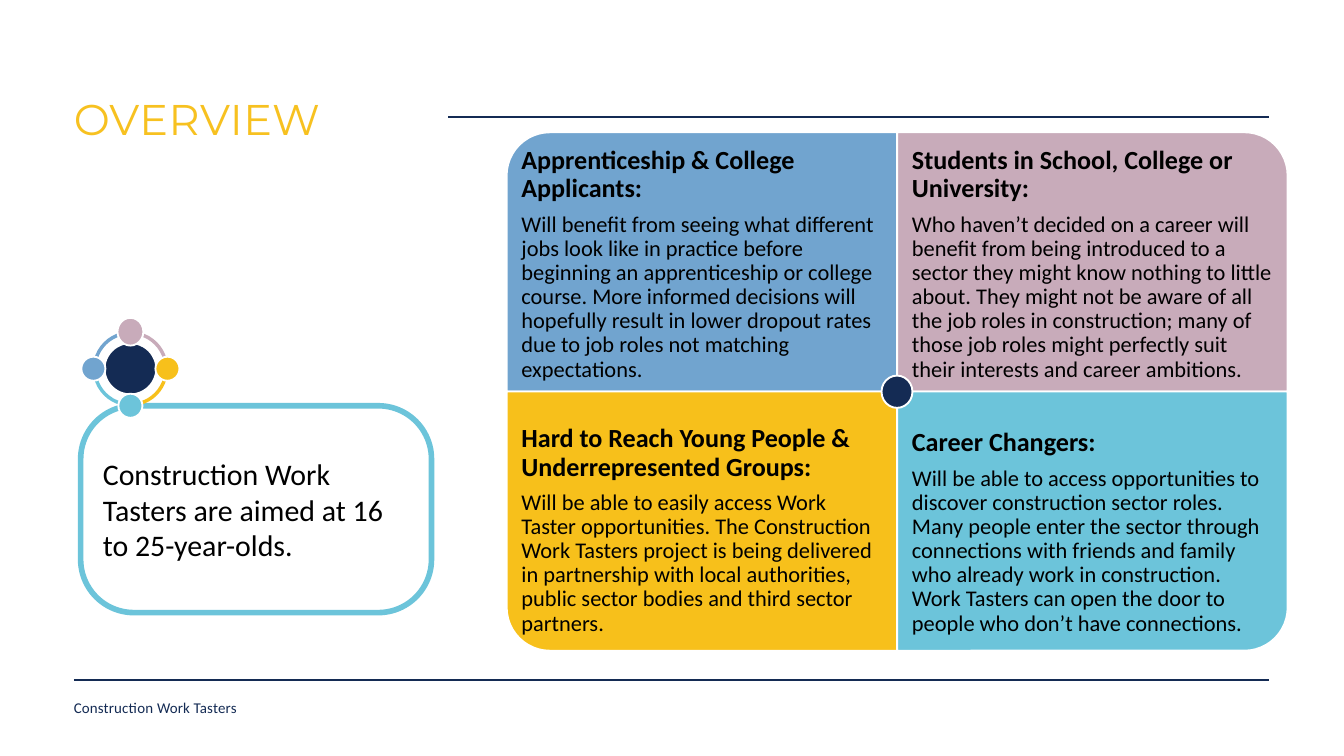
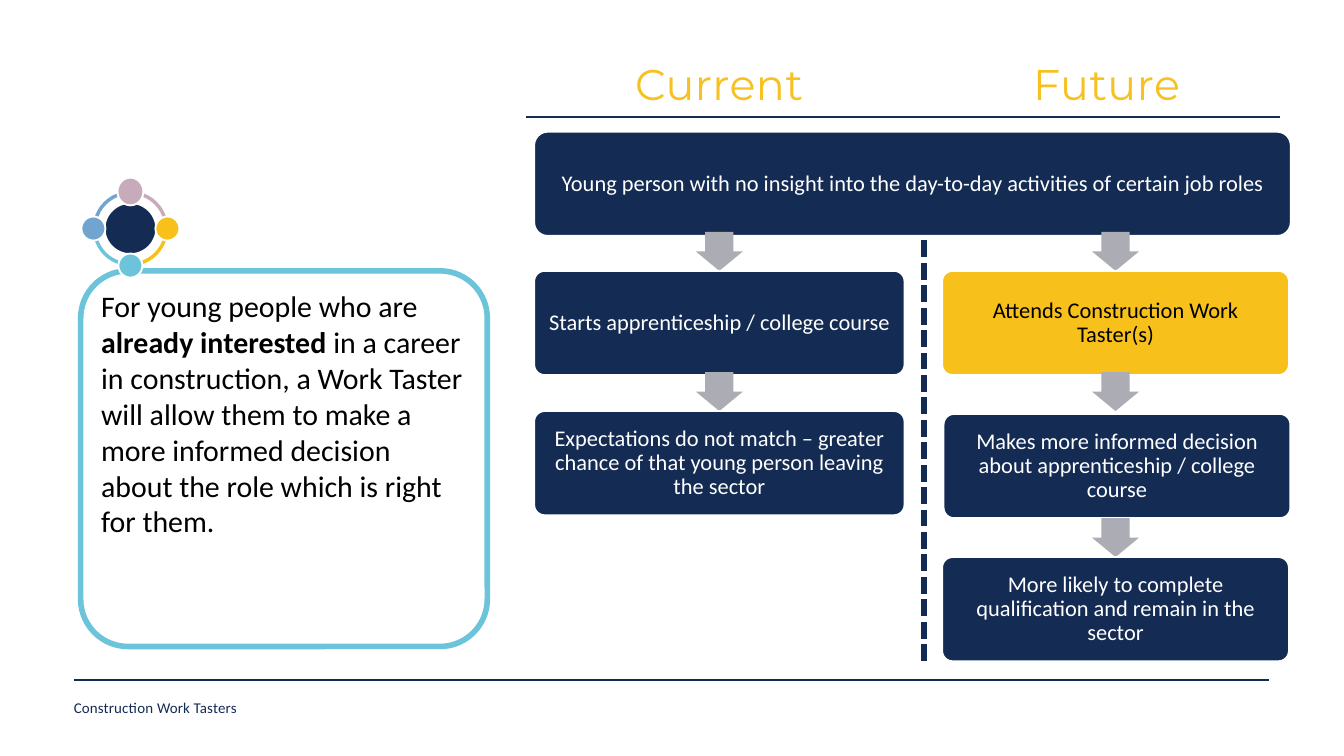
from lxml.etree import SubElement
from pptx import Presentation
from pptx.dml.color import RGBColor
from pptx.enum.dml import MSO_LINE
from pptx.enum.shapes import MSO_CONNECTOR, MSO_SHAPE
from pptx.enum.text import MSO_ANCHOR, MSO_AUTO_SIZE, PP_ALIGN
from pptx.oxml.ns import qn
from pptx.util import Cm, Pt

COLOURS = {
    "navy": "142B54", "divider": "122A54", "title": "F7C120", "yellow": "F7C01B",
    "cyan": "6CC4DA", "blue": "71A4CF", "pink": "C8ABBA", "grey": "ACADB4",
    "black": "000000", "white": "FFFFFF",
}
TITLE = {"font": {"name": "Montserrat", "size": Pt(46)}, "colour": "title", "tracking": 60,
         "paragraph": {"line_spacing": Pt(36.8)}}
FOOTER = {"font": {"name": "Calibri", "size": Pt(16)}, "colour": "navy", "tracking": 20,
          "paragraph": {"line_spacing": Pt(22.4)}}
PANEL = {"font": {"name": "Calibri", "size": Pt(32)}, "colour": "black",
         "paragraph": {"alignment": PP_ALIGN.LEFT}}
TILE_HEADING = {"font": {"name": "Calibri", "size": Pt(28), "bold": True}, "colour": "black",
                "paragraph": {"line_spacing": 0.9, "space_after": Pt(9.8)}}
TILE_BODY = {"font": {"name": "Calibri", "size": Pt(24)}, "colour": "black",
             "paragraph": {"line_spacing": 0.9}}
STEP = {"font": {"name": "Calibri", "size": Pt(24)}, "colour": "white",
        "paragraph": {"line_spacing": 0.9, "alignment": PP_ALIGN.CENTER}}

LEFT_MARGIN, RIGHT_MARGIN = 2.79, 47.96
TILE_LEFT, TILE_TOP, TILE_WIDTH, TILE_HEIGHT = 19.15, 5, 14.76, 9.8
TILE_TEXT_HEIGHT = 7.37
FLOW_LEFT, STEP_HEIGHT = 20.19, 3.94
STEP_TOPS = [10.24, 15.54, 21.06]
ARROW_WIDTH, ARROW_HEIGHT = 1.78, 1.47

TILES = [
    ("blue", 270, "Apprenticeship & College Applicants:",
     "Will benefit from seeing what different jobs look like in practice before beginning an "
     "apprenticeship or college course. More informed decisions will hopefully result in lower "
     "dropout rates due to job roles not matching expectations."),
    ("pink", 0, "Students in School, College or University:",
     "Who haven’t decided on a career will benefit from being introduced to a sector they might "
     "know nothing to little about. They might not be aware of all the job roles in construction; "
     "many of those job roles might perfectly suit their interests and career ambitions."),
    ("yellow", 180, "Hard to Reach Young People & Underrepresented Groups:",
     "Will be able to easily access Work Taster opportunities. The Construction Work Tasters "
     "project is being delivered in partnership with local authorities, public sector bodies "
     "and third sector partners."),
    ("cyan", 90, "Career Changers:",
     "Will be able to access opportunities to discover construction sector roles. Many people "
     "enter the sector through connections with friends and family who already work in "
     "construction. Work Tasters can open the door to people who don’t have connections."),
]
CURRENT_STEPS = [
    ("Starts apprenticeship / college course", "navy", 0),
    ("Expectations do not match – greater chance of that young person leaving the sector", "navy", 0),
]
FUTURE_STEPS = [
    ("Attends Construction Work Taster(s)", "yellow", 0),
    ("Makes more informed decision about apprenticeship / college course", "navy", 0.11),
    ("More likely to complete qualification and remain in the sector", "navy", 0),
]


def colour(name):
    """Return the named colour."""
    return RGBColor.from_string(COLOURS[name])


def set_attributes(target, values):
    """Set each named value on the target."""
    for name, value in values.items():
        setattr(target, name, value)


def set_frame(text_frame, margin=None, **values):
    """Wrap a text frame and set its margins and other values."""
    set_attributes(text_frame, {"word_wrap": True, **values})
    if margin is not None:
        sides = ("margin_left", "margin_top", "margin_right", "margin_bottom")
        set_attributes(text_frame, dict.fromkeys(sides, Cm(margin)))


def write_paragraph(paragraph, runs, style, **overrides):
    """Fill a paragraph with (text, font values) runs in one style."""
    set_attributes(paragraph, {**style["paragraph"], **overrides})
    for text, emphasis in runs:
        run = paragraph.add_run()
        run.text = text
        set_attributes(run.font, {**style["font"], **emphasis})
        run.font.color.rgb = colour(style["colour"])
        if "tracking" in style:
            run.font._element.set("spc", str(style["tracking"]))


def add_figure(shapes, kind, box, fill=None, line=None, width=2, adjustments=(), rotation=0):
    """Add a preset shape without shadow, with the given fill and outline."""
    shape = shapes.add_shape(kind, *map(Cm, box))
    shape.shadow.inherit = False
    shape.rotation = rotation
    for index, value in enumerate(adjustments):
        shape.adjustments[index] = value
    if fill:
        shape.fill.solid()
        shape.fill.fore_color.rgb = colour(fill)
    else:
        shape.fill.background()
    if line:
        shape.line.color.rgb = colour(line)
        shape.line.width = Pt(width)
    else:
        shape.line.fill.background()
    return shape


def add_rule(slide, start, end, width, name="navy", dash=None):
    """Draw a straight line between two points."""
    connector = slide.shapes.add_connector(MSO_CONNECTOR.STRAIGHT, *map(Cm, start + end))
    connector.line.color.rgb = colour(name)
    set_attributes(connector.line, {"width": Pt(width), "dash_style": dash})
    SubElement(connector._element.spPr, qn("a:effectLst"))


def add_label(slide, box, text, style, **overrides):
    """Add a single-line label without margins."""
    label = slide.shapes.add_textbox(*map(Cm, box))
    set_frame(label.text_frame, 0, auto_size=MSO_AUTO_SIZE.SHAPE_TO_FIT_TEXT)
    write_paragraph(label.text_frame.paragraphs[0], [(text, {})], style, **overrides)


def add_panel(slide, box, corner, runs, anchor):
    """Add the outlined panel with its statement."""
    panel = add_figure(slide.shapes, MSO_SHAPE.ROUNDED_RECTANGLE, box,
                       line="cyan", width=6, adjustments=[corner])
    set_frame(panel.text_frame, vertical_anchor=anchor)
    write_paragraph(panel.text_frame.paragraphs[0], runs, PANEL)


def add_badge(slide, middle):
    """Add the ring of arcs with a core and four satellites."""
    centre, ring, orbit = 4.93, 2.84, 1.4
    shapes = slide.shapes.add_group_shape().shapes
    for name, start, end in [("cyan", 108, 162), ("yellow", 54, 108), ("pink", 0, 54), ("blue", 162, 0)]:
        add_figure(shapes, MSO_SHAPE.BLOCK_ARC, (centre - ring / 2, middle - ring / 2, ring, ring),
                   fill=name, adjustments=[start, end, 0.046], rotation=270)
    for name, across, down, width, height in [
        ("navy", 0, 0, 1.96, 1.94), ("blue", -orbit, 0, 0.91, 0.91), ("pink", 0, -orbit, 0.98, 1.05),
        ("yellow", orbit, 0, 0.91, 0.91), ("cyan", 0, orbit, 0.91, 0.91),
    ]:
        box = (centre + across - width / 2, middle + down - height / 2, width, height)
        add_figure(shapes, MSO_SHAPE.OVAL, box, fill=name, line="white")


def add_tile(slide, index, name, rotation, heading, body):
    """Add one quarter of the matrix, its rounded corner facing outwards."""
    row, column = divmod(index, 2)
    left, top = TILE_LEFT + column * TILE_WIDTH, TILE_TOP + row * TILE_HEIGHT
    width, height = (TILE_HEIGHT, TILE_WIDTH) if rotation % 180 else (TILE_WIDTH, TILE_HEIGHT)
    box = (left + (TILE_WIDTH - width) / 2, top + (TILE_HEIGHT - height) / 2, width, height)
    add_figure(slide.shapes, MSO_SHAPE.ROUND_1_RECTANGLE, box, fill=name, line="white", rotation=rotation)
    text_top = top + row * (TILE_HEIGHT - TILE_TEXT_HEIGHT)
    textbox = slide.shapes.add_textbox(*map(Cm, (left, text_top, TILE_WIDTH, TILE_TEXT_HEIGHT)))
    text_frame = textbox.text_frame
    set_frame(text_frame, 0.56, vertical_anchor=MSO_ANCHOR.BOTTOM if row else MSO_ANCHOR.TOP)
    write_paragraph(text_frame.paragraphs[0], [(heading, {})], TILE_HEADING)
    write_paragraph(text_frame.add_paragraph(), [(body, {})], TILE_BODY)


def add_step(slide, box, text, fill="navy", corner=0.1):
    """Add one box of the flow."""
    step = add_figure(slide.shapes, MSO_SHAPE.ROUNDED_RECTANGLE, box,
                      fill=fill, line="white", adjustments=[corner])
    set_frame(step.text_frame, 0.26, vertical_anchor=MSO_ANCHOR.MIDDLE)
    style = {**STEP, "colour": "white" if fill == "navy" else "black"}
    write_paragraph(step.text_frame.paragraphs[0], [(text, {})], style)


def add_flow(slide, left, width, steps):
    """Add a column of boxes, each below an arrow."""
    for top, (text, fill, shift) in zip(STEP_TOPS, steps):
        arrow = (left + (width - ARROW_WIDTH) / 2, top - ARROW_HEIGHT, ARROW_WIDTH, ARROW_HEIGHT)
        add_figure(slide.shapes, MSO_SHAPE.DOWN_ARROW, arrow, fill="grey", adjustments=[0.6, 0.5])
        add_step(slide, (left + shift / 2, top + shift, width, STEP_HEIGHT), text, fill)


def add_base(presentation, rule_left, rule_right):
    """Add a blank slide with its two rules and footer."""
    slide = presentation.slides.add_slide(presentation.slide_layouts[6])
    add_rule(slide, (LEFT_MARGIN, 25.7), (RIGHT_MARGIN, 25.7), 2.25)
    add_rule(slide, (rule_left, 4.42), (rule_right, 4.42), 3)
    add_label(slide, (LEFT_MARGIN, 26.29, 9.75, 0.74), "Construction Work Tasters", FOOTER)
    return slide


def build_overview(presentation):
    """Build the slide on who the tasters are for."""
    slide = add_base(presentation, 16.94, RIGHT_MARGIN)
    add_label(slide, (LEFT_MARGIN, 4.14, 33.81, 1.4), "OVERVIEW", TITLE)
    add_panel(slide, (3.05, 15.34, 13.26, 7.82), 0.257,
              [("Construction Work Tasters are aimed at 16 to 25-year-olds.", {})], MSO_ANCHOR.MIDDLE)
    add_badge(slide, 13.94)
    for index, tile in enumerate(TILES):
        add_tile(slide, index, *tile)
    add_figure(slide.shapes, MSO_SHAPE.OVAL, (33.32, 14.2, 1.17, 1.22), fill="navy", line="white")


def build_comparison(presentation):
    """Build the slide comparing the current and future routes."""
    slide = add_base(presentation, 19.89, 48.39)
    for left, text in [(21.49, "Current"), (36.14, "Future")]:
        add_label(slide, (left, 2.84, 11.38, 1.4), text, TITLE, alignment=PP_ALIGN.CENTER)
    add_panel(slide, (3.05, 10.24, 15.37, 14.2), 0.126, [
        ("For young people who are ", {}),
        ("already interested ", {"bold": True}),
        ("in a career in construction, a Work Taster will allow them to make a more informed "
         "decision about the role which is right for them.", {}),
    ], MSO_ANCHOR.TOP)
    add_badge(slide, 8.64)
    add_step(slide, (FLOW_LEFT, 4.98, 28.6, STEP_HEIGHT),
             "Young person with no insight into the day-to-day activities of certain job roles", corner=0.13)
    add_flow(slide, FLOW_LEFT, 14, CURRENT_STEPS)
    add_flow(slide, 35.61, 13.11, FUTURE_STEPS)
    add_rule(slide, (34.93, 9.09), (34.93, 25), 6, "divider", MSO_LINE.SQUARE_DOT)


def main():
    """Build and save the presentation."""
    presentation = Presentation()
    set_attributes(presentation, {"slide_width": Cm(50.8), "slide_height": Cm(28.58)})
    build_overview(presentation)
    build_comparison(presentation)
    presentation.save("out.pptx")


if __name__ == "__main__":
    main()
